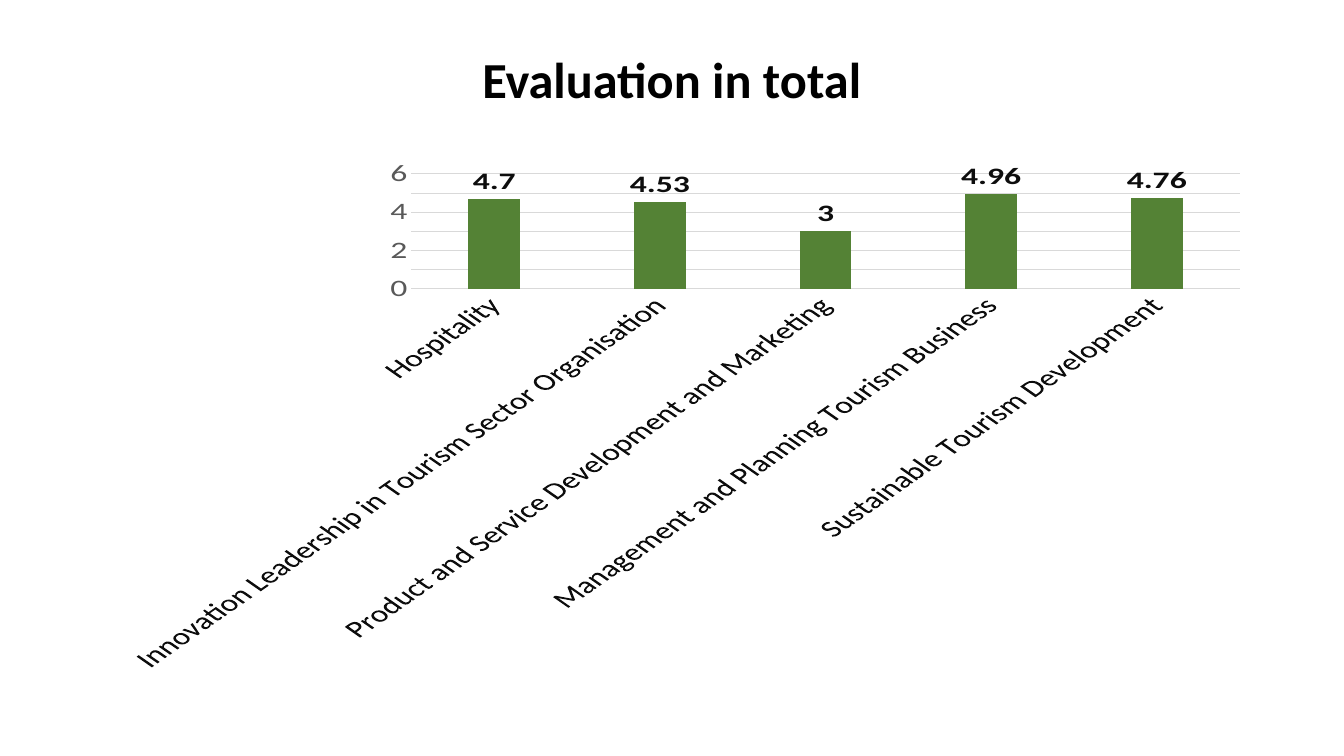
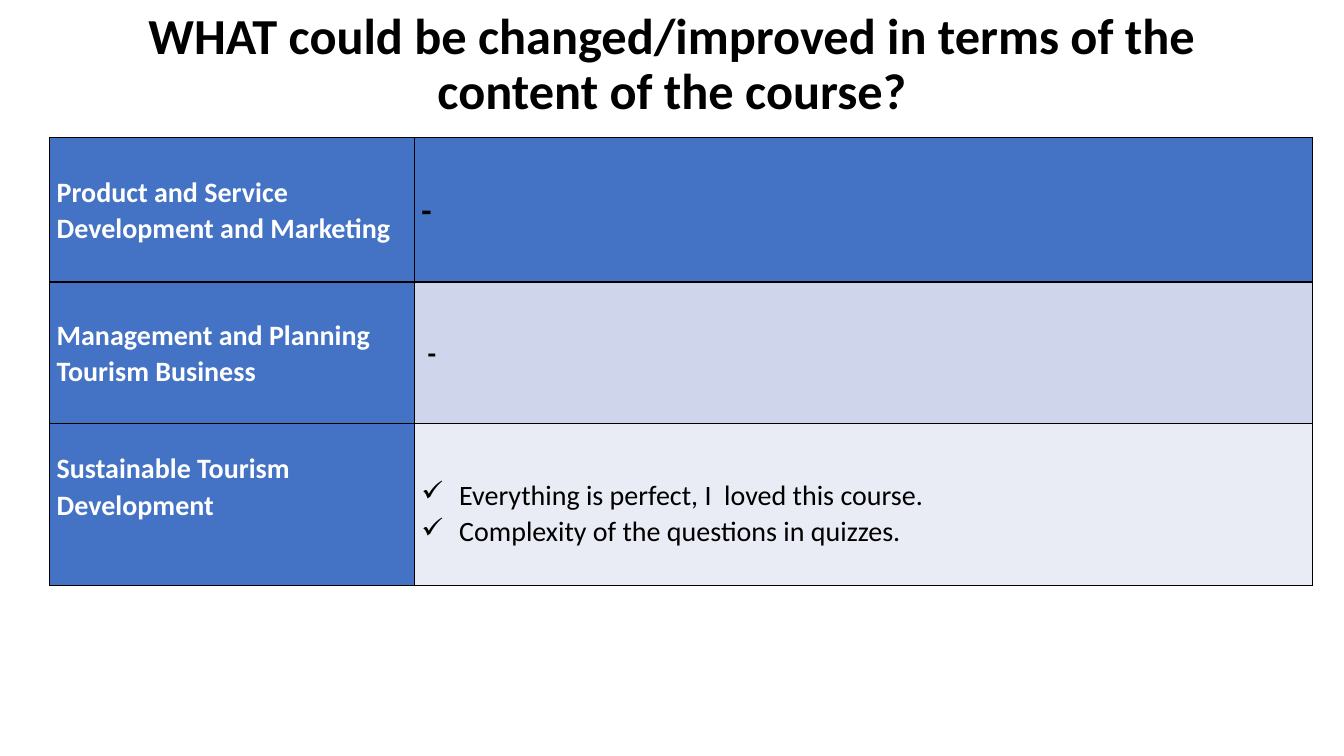
from dataclasses import dataclass

from lxml import etree
from pptx import Presentation
from pptx.chart.data import CategoryChartData
from pptx.dml.color import RGBColor
from pptx.enum.chart import XL_CHART_TYPE, XL_LABEL_POSITION, XL_TICK_MARK
from pptx.enum.text import MSO_ANCHOR, MSO_AUTO_SIZE, PP_ALIGN
from pptx.oxml.ns import qn
from pptx.util import Pt

COLUMN_CLUSTERED = XL_CHART_TYPE.COLUMN_CLUSTERED
OUTSIDE_END = XL_LABEL_POSITION.OUTSIDE_END
NO_TICK = XL_TICK_MARK.NONE
MIDDLE = MSO_ANCHOR.MIDDLE
BOTTOM = MSO_ANCHOR.BOTTOM
NO_AUTOFIT = MSO_AUTO_SIZE.NONE
CENTER = PP_ALIGN.CENTER

FONT_NAME = "Calibri"
BLACK = "000000"
WHITE = "FFFFFF"
LABEL_INK = "0D0D0D"
AXIS_GREY = "595959"
GRID_GREY = "D9D9D9"
BAR_GREEN = "548235"
TABLE_BLUE = "4472C4"
BAND_DARK = "CFD5EA"
BAND_LIGHT = "E9EBF5"

TITLE_ONLY = 5
CELL_INSET = 5
BULLET_INDENT = 27
COLUMN_WIDTHS = (260.5, 641.5)


@dataclass(frozen=True)
class Rating:
    course: str
    score: float


@dataclass(frozen=True)
class FeedbackRow:
    course: str
    answers: tuple[str, ...]
    height: float
    fill: str
    size: float = 20
    bold: bool = True
    bulleted: bool = False
    anchor: MSO_ANCHOR = MIDDLE
    indent: float = 0
    bottom_inset: float = 0


RATINGS = (
    Rating("Hospitality", 4.7),
    Rating("Innovation Leadership in Tourism Sector Organisation", 4.53),
    Rating("Product and Service Development and Marketing", 3),
    Rating("Management and Planning Tourism Business", 4.96),
    Rating("Sustainable Tourism Development", 4.76),
)

FEEDBACK = (
    FeedbackRow("Product and Service Development and Marketing", ("-",),
                103.5, TABLE_BLUE, size=24),
    FeedbackRow("Management and Planning Tourism Business", ("-",),
                101, BAND_DARK, indent=4.5),
    FeedbackRow("Sustainable Tourism Development",
                ("Everything is perfect, I  loved this course.",
                 "Complexity of the questions in quizzes."),
                116, BAND_LIGHT, bold=False, bulleted=True, anchor=BOTTOM,
                bottom_inset=26),
)


def color(value: str) -> RGBColor:
    return RGBColor.from_string(value)


def style_font(font, size: float, ink: str, bold: bool = False) -> None:
    font.name = FONT_NAME
    font.size = Pt(size)
    font.bold = bold
    font.color.rgb = color(ink)


def add_titled_slide(presentation, text: str, height: float):
    slide = presentation.slides.add_slide(presentation.slide_layouts[TITLE_ONLY])
    title = slide.shapes.title
    title.left, title.top = Pt(66), Pt(29)
    title.width, title.height = Pt(828), Pt(height)
    frame = title.text_frame
    frame.text = text
    frame.word_wrap = True
    frame.auto_size = NO_AUTOFIT
    frame.vertical_anchor = MIDDLE
    paragraph = frame.paragraphs[0]
    paragraph.alignment = CENTER
    paragraph.line_spacing = 0.9
    style_font(paragraph.runs[0].font, 36, BLACK, True)
    return slide


def style_axis(axis, ink: str) -> None:
    axis.major_tick_mark = NO_TICK
    axis.minor_tick_mark = NO_TICK
    style_font(axis.tick_labels.font, 24, ink)


def style_grid_line(line) -> None:
    line.color.rgb = color(GRID_GREY)
    line.width = Pt(0.75)


def add_rating_chart(slide) -> None:
    data = CategoryChartData()
    data.categories = [rating.course for rating in RATINGS]
    data.add_series("Series 1", [rating.score for rating in RATINGS])
    chart = slide.shapes.add_chart(
        COLUMN_CLUSTERED, Pt(74), Pt(114), Pt(828), Pt(367), data).chart
    chart.has_title = False
    chart.has_legend = False
    style_font(chart.font, 24, BLACK)

    style_axis(chart.category_axis, LABEL_INK)
    style_grid_line(chart.category_axis.format.line)
    style_axis(chart.value_axis, AXIS_GREY)
    chart.value_axis.format.line.fill.background()
    chart.value_axis.has_major_gridlines = True
    style_grid_line(chart.value_axis.major_gridlines.format.line)

    plot = chart.plots[0]
    plot.gap_width = 219
    plot.overlap = -27
    plot.vary_by_categories = False
    fill = plot.series[0].format.fill
    fill.solid()
    fill.fore_color.rgb = color(BAR_GREEN)
    labels = plot.series[0].data_labels
    labels.show_value = True
    labels.position = OUTSIDE_END
    style_font(labels.font, 24, LABEL_INK, True)


def add_cell_borders(cell) -> None:
    properties = cell._tc.get_or_add_tcPr()
    for position, side in enumerate(("a:lnL", "a:lnR", "a:lnT", "a:lnB")):
        line = etree.Element(qn(side), w=str(Pt(1)))
        fill = etree.SubElement(line, qn("a:solidFill"))
        etree.SubElement(fill, qn("a:srgbClr"), val=BLACK)
        properties.insert(position, line)


def add_check_bullet(paragraph) -> None:
    properties = paragraph._p.get_or_add_pPr()
    properties.set("marL", str(Pt(BULLET_INDENT)))
    properties.set("indent", str(-Pt(BULLET_INDENT)))
    etree.SubElement(properties, qn("a:buChar"), char="✓")


def fill_cell(cell, lines: tuple[str, ...], fill: str, size: float, ink: str,
              bold: bool, bulleted: bool = False) -> None:
    cell.fill.solid()
    cell.fill.fore_color.rgb = color(fill)
    add_cell_borders(cell)
    cell.vertical_anchor = MIDDLE
    cell.margin_left = cell.margin_right = Pt(CELL_INSET)
    cell.margin_top = cell.margin_bottom = 0
    cell.text_frame.text = "\n".join(lines)
    for paragraph in cell.text_frame.paragraphs:
        paragraph.line_spacing = 1.07
        if bulleted:
            add_check_bullet(paragraph)
        style_font(paragraph.runs[0].font, size, ink, bold)


def add_feedback_table(slide) -> None:
    height = sum(row.height for row in FEEDBACK)
    table = slide.shapes.add_table(
        len(FEEDBACK), len(COLUMN_WIDTHS), Pt(35.5), Pt(98),
        Pt(sum(COLUMN_WIDTHS)), Pt(height)).table
    table.first_row = False
    table.horz_banding = False
    for column, width in zip(table.columns, COLUMN_WIDTHS):
        column.width = Pt(width)
    for index, row in enumerate(FEEDBACK):
        table.rows[index].height = Pt(row.height)
        course_cell, answer_cell = table.cell(index, 0), table.cell(index, 1)
        fill_cell(course_cell, (row.course,), TABLE_BLUE, 20, WHITE, True)
        fill_cell(answer_cell, row.answers, row.fill, row.size, BLACK,
                  row.bold, row.bulleted)
        answer_cell.vertical_anchor = row.anchor
        answer_cell.margin_left = Pt(CELL_INSET + row.indent)
        for cell in (course_cell, answer_cell):
            cell.margin_bottom = Pt(row.bottom_inset)


def main() -> None:
    presentation = Presentation()
    presentation.slide_width = Pt(960)
    presentation.slide_height = Pt(540)
    add_rating_chart(add_titled_slide(presentation, "Evaluation in total", 60))
    add_feedback_table(add_titled_slide(
        presentation,
        "WHAT could be changed/improved in terms of the content of the course?",
        36))
    presentation.save("out.pptx")


if __name__ == "__main__":
    main()
